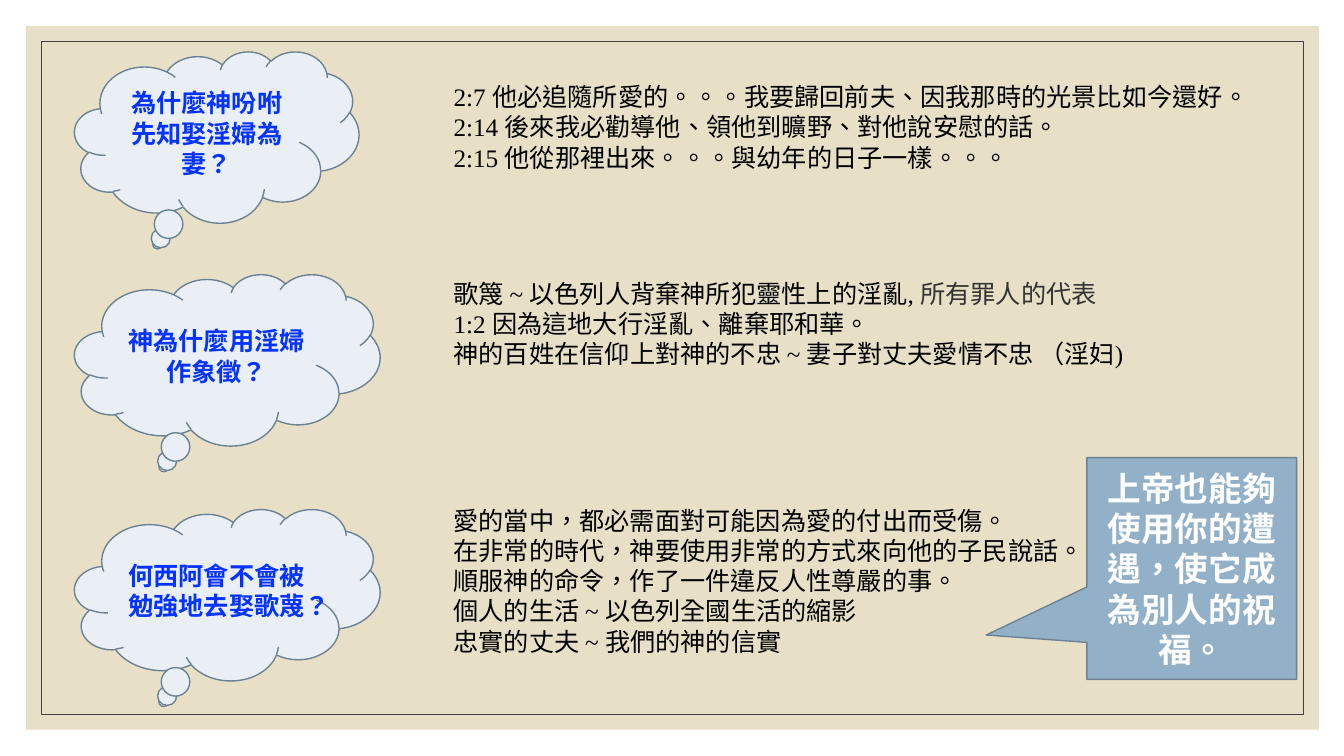
from pptx import Presentation
from pptx.dml.color import RGBColor
from pptx.enum.lang import MSO_LANGUAGE_ID as LANG
from pptx.enum.shapes import MSO_SHAPE as SHAPE
from pptx.enum.text import MSO_ANCHOR as ANCHOR, MSO_AUTO_SIZE as AUTO, PP_ALIGN as ALIGN
from pptx.util import Emu, Pt

PX = 9144  # EMU per px, 100 px to the inch

SAND = RGBColor(0xE7, 0xE0, 0xC7)
FRAME = RGBColor(0x40, 0x40, 0x40)
CLOUD = RGBColor(0xE9, 0xEF, 0xF4)
STEEL = RGBColor(0x92, 0xB0, 0xC8)
OUTLINE = RGBColor(0x6C, 0x82, 0x94)
BLUE = RGBColor(0x04, 0x32, 0xFF)
GREY = RGBColor(0x33, 0x33, 0x33)
BLACK = RGBColor(0, 0, 0)
WHITE = RGBColor(0xFF, 0xFF, 0xFF)

SERIF = "Times New Roman"
SANS_SC = "Noto Sans CJK SC"
SANS_TC = "Noto Sans CJK TC"
OPEN = "Open Sans"


class Deck:
    def __init__(self, width, height):
        self.prs = Presentation()
        self.prs.slide_width, self.prs.slide_height = self.px(width, height)
        self.slide = self.prs.slides.add_slide(self.prs.slide_layouts[6])

    def px(self, *lengths):
        return [Emu(n * PX) for n in lengths]

    def shape(self, kind, box, fill=None, line=None, weight=1):
        sp = self.slide.shapes.add_shape(kind, *self.px(*box))
        sp.shadow.inherit = False
        if fill is None:
            sp.fill.background()
        else:
            sp.fill.solid()
            sp.fill.fore_color.rgb = fill
        if line is None:
            sp.line.fill.background()
        else:
            sp.line.color.rgb = line
            sp.line.width = Pt(weight)
        return sp

    def paragraph(self, p, runs, size, font, color, bold=False):
        """Fill p with runs of (text, font, color); None keeps the paragraph's own."""
        p.font.size, p.font.name, p.font.bold = Pt(size), font, bold
        p.font.color.rgb = color
        p.line_spacing = Pt(size * 1.2)
        for text, run_font, run_color in runs:
            r = p.add_run()
            r.text = text
            r.font.language_id = LANG.TRADITIONAL_CHINESE
            if run_font:
                r.font.name = run_font
            if run_color:
                r.font.color.rgb = run_color

    def callout(self, kind, box, text, fill, size, font, color):
        sp = self.shape(kind, box, fill, OUTLINE)
        tf = sp.text_frame
        tf.word_wrap = True
        tf.vertical_anchor = ANCHOR.MIDDLE
        p = tf.paragraphs[0]
        p.alignment = ALIGN.CENTER
        self.paragraph(p, [(text, None, None)], size, font, color, bold=True)
        return sp

    def text(self, box, lines):
        sp = self.slide.shapes.add_textbox(*self.px(*box))
        tf = sp.text_frame
        tf.word_wrap = True
        tf.auto_size = AUTO.SHAPE_TO_FIT_TEXT
        for i, runs in enumerate(lines):
            p = tf.add_paragraph() if i else tf.paragraphs[0]
            if isinstance(runs, str):
                runs = [(runs, None, None)]
            self.paragraph(p, runs, 18, SERIF, BLACK)


# Question cloud (top, width, text) and its answer (top, width, height, lines)
TOPICS = [
    ((51, 282, "為什麼神吩咐先知娶淫婦為妻？"),
     (76, 793, 101, [
         "2:7 他必追隨所愛的。。。我要歸回前夫、因我那時的光景比如今還好。",
         "2:14 後來我必勸導他、領他到曠野、對他說安慰的話。",
         "2:15 他從那裡出來。。。與幼年的日子一樣。。。",
     ])),
    ((272, 303, "神為什麼用淫婦作象徵？"),
     (271, 752, 101, [
         [("歌篾 ~ 以色列人背棄神所犯靈性上的淫亂, ", None, None),
          ("所有罪人的代表", OPEN, GREY)],
         "1:2 因為這地大行淫亂、離棄耶和華。",
         "神的百姓在信仰上對神的不忠 ~ 妻子對丈夫愛情不忠 （淫妇)",
     ])),
    ((505, 303, "何西阿會不會被勉強地去娶歌蔑？"),
     (496, 637, 162, [
         "愛的當中，都必需面對可能因為愛的付出而受傷。",
         "在非常的時代，神要使用非常的方式來向他的子民說話。",
         [("順服神的命令，作了一件違反人性尊嚴的事。", SANS_TC, None)],
         "個人的生活 ~ 以色列全國生活的縮影",
         "忠實的丈夫 ~ 我們的神的信實",
     ])),
]


def main():
    deck = Deck(1333, 750)

    # Background panel and frame
    deck.shape(SHAPE.RECTANGLE, (26, 26, 1282, 698), fill=SAND)
    deck.shape(SHAPE.RECTANGLE, (41, 41, 1252, 668), line=FRAME, weight=0.5)

    # Questions and answers
    for (cloud_top, cloud_width, question), (top, width, height, lines) in TOPICS:
        deck.callout(SHAPE.CLOUD_CALLOUT, (74, cloud_top, cloud_width, 170),
                     question, CLOUD, 18, SERIF, BLUE)
        deck.text((440, top, width, height), lines)

    # Closing message
    message = deck.callout(SHAPE.RECTANGULAR_CALLOUT, (1078, 454, 208, 220),
                           "上帝也能夠使用你的遭遇，使它成為別人的祝福。",
                           STEEL, 24, SANS_SC, WHITE)
    message.adjustments[0] = -0.98
    message.adjustments[1] = 0.3

    deck.prs.save("out.pptx")


if __name__ == "__main__":
    main()
